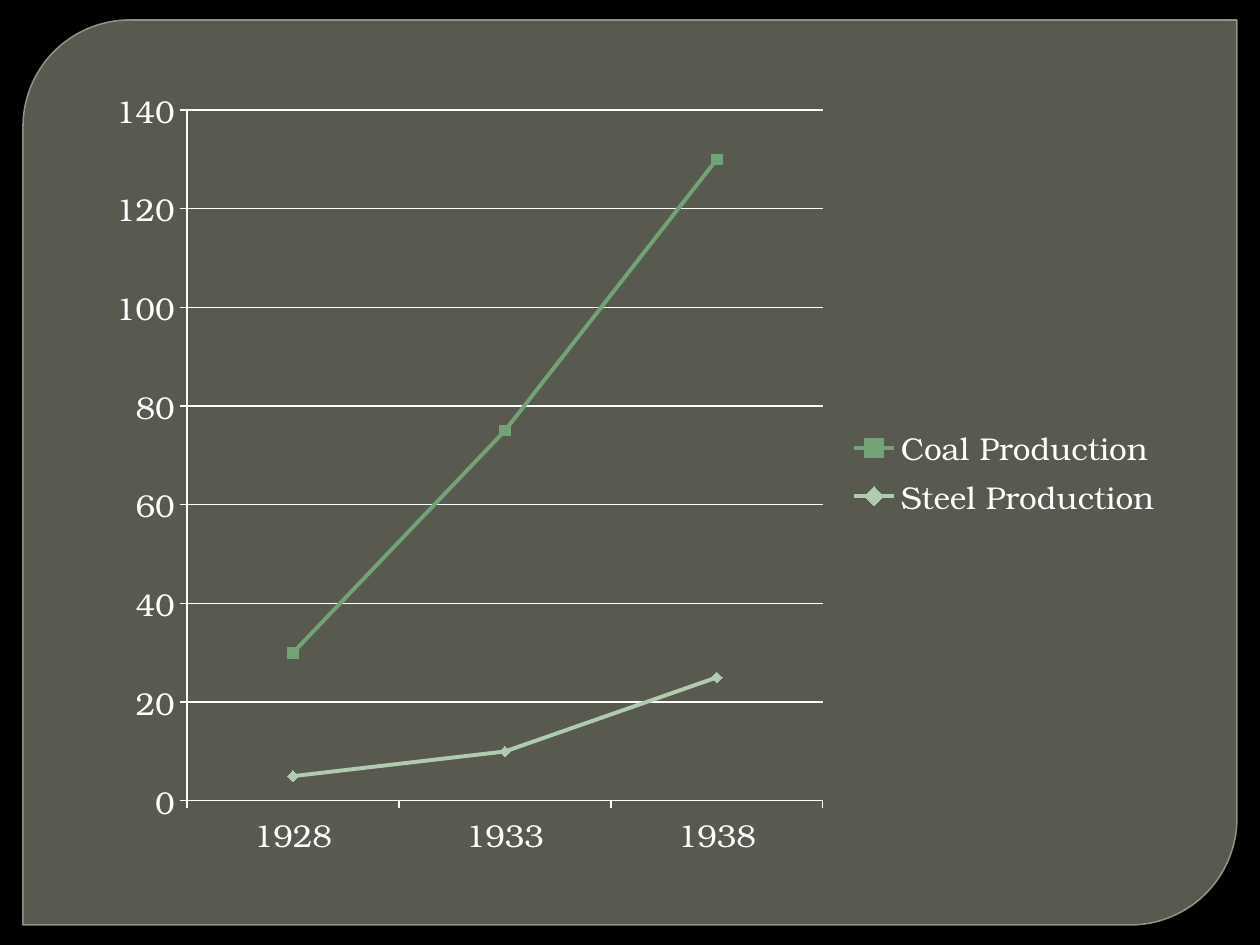
import dataclasses

import lxml.etree
import pptx
import pptx.chart.data
import pptx.dml.color
import pptx.enum.chart
import pptx.enum.shapes
import pptx.oxml.ns
import pptx.util

SCALE = 914400 // 126  # EMU in one px
PANEL = (23, 20, 1214, 905)
CHART = (94, 73, 1081, 798)
PLOT = (187, 110, 636, 691)

YEARS = ("1928", "1933", "1938")
MARK = pptx.enum.chart.XL_MARKER_STYLE
SERIES = (
    ("Coal Production", (30, 75, 130), "72A376", MARK.SQUARE),
    ("Steel Production", (5, 10, 25), "B0CCB0", MARK.DIAMOND),
)


@dataclasses.dataclass(frozen=True)
class Theme:
    back: str = "000000"
    panel: str = "888B7B"
    edge: str = "9DA090"
    text: str = "FFFFFF"
    font: str = "TeX Gyre Bonum"
    size: int = 18


THEME = Theme()


def emu(box):
    return [pptx.util.Emu(px * SCALE) for px in box]


def rgb(code):
    return pptx.dml.color.RGBColor.from_string(code)


def paint(fill, code, alpha=100):
    """Set a solid fill; alpha is the opacity in percent."""
    fill.solid()
    fill.fore_color.rgb = rgb(code)
    if alpha < 100:
        color = fill._xPr.find(".//" + pptx.oxml.ns.qn("a:srgbClr"))
        lxml.etree.SubElement(color, pptx.oxml.ns.qn("a:alpha"), val=str(alpha * 1000))


def stroke(line, code, width, alpha=100):
    paint(line.fill, code, alpha)
    line.width = pptx.util.Pt(width)


def style(font, name=THEME.font, size=THEME.size, color=THEME.text):
    font.name = name
    font.size = pptx.util.Pt(size)
    font.bold = False
    font.color.rgb = rgb(color)


def add_panel(slide):
    kind = pptx.enum.shapes.MSO_SHAPE.ROUND_2_DIAG_RECTANGLE
    panel = slide.shapes.add_shape(kind, *emu(PANEL))
    panel.adjustments[0] = 0.118
    panel.adjustments[1] = 0
    panel.shadow.inherit = False
    paint(panel.fill, THEME.panel, alpha=65)
    stroke(panel.line, THEME.edge, 0.87, alpha=88)


def place_plot(chart):
    """Fix the inner plot area as fractions of the chart frame."""
    left, top, width, height = CHART
    x, y, w, h = PLOT
    parts = {
        "layoutTarget": "inner", "xMode": "edge", "yMode": "edge",
        "x": (x - left) / width, "y": (y - top) / height,
        "w": w / width, "h": h / height,
    }
    qn = pptx.oxml.ns.qn
    area = chart._chartSpace.find(".//" + qn("c:plotArea"))
    for old in area.findall(qn("c:layout")):
        area.remove(old)
    layout = lxml.etree.Element(qn("c:layout"))
    area.insert(0, layout)
    manual = lxml.etree.SubElement(layout, qn("c:manualLayout"))
    for tag, value in parts.items():
        text = value if isinstance(value, str) else f"{value:.4f}"
        lxml.etree.SubElement(manual, qn("c:" + tag), val=text)


def style_axis(axis):
    axis.major_tick_mark = pptx.enum.chart.XL_TICK_MARK.OUTSIDE
    axis.minor_tick_mark = pptx.enum.chart.XL_TICK_MARK.NONE
    stroke(axis.format.line, THEME.text, 0.75)
    style(axis.tick_labels.font)


def add_chart(slide):
    data = pptx.chart.data.CategoryChartData()
    data.categories = YEARS
    for name, values, _, _ in SERIES:
        data.add_series(name, values)
    kind = pptx.enum.chart.XL_CHART_TYPE.LINE_MARKERS
    chart = slide.shapes.add_chart(kind, *emu(CHART), data).chart
    chart.has_title = False
    style(chart.font)
    place_plot(chart)

    for axis in (chart.category_axis, chart.value_axis):
        style_axis(axis)
    scale = chart.value_axis
    scale.minimum_scale, scale.maximum_scale, scale.major_unit = 0, 140, 20
    scale.has_major_gridlines = True
    stroke(scale.major_gridlines.format.line, THEME.text, 0.75)

    chart.plots[0].vary_by_categories = False
    for series, (_, _, color, mark) in zip(chart.plots[0].series, SERIES):
        series.smooth = False
        stroke(series.format.line, color, 2.25)
        series.marker.style = mark
        series.marker.size = 6
        paint(series.marker.format.fill, color)
        series.marker.format.line.fill.background()

    chart.has_legend = True
    chart.legend.position = pptx.enum.chart.XL_LEGEND_POSITION.RIGHT
    chart.legend.include_in_layout = False
    style(chart.legend.font)


def main():
    deck = pptx.Presentation()
    deck.slide_width, deck.slide_height = emu((1260, 945))
    slide = deck.slides.add_slide(deck.slide_layouts[6])
    paint(slide.background.fill, THEME.back)
    add_panel(slide)
    add_chart(slide)
    deck.save("out.pptx")


if __name__ == "__main__":
    main()
